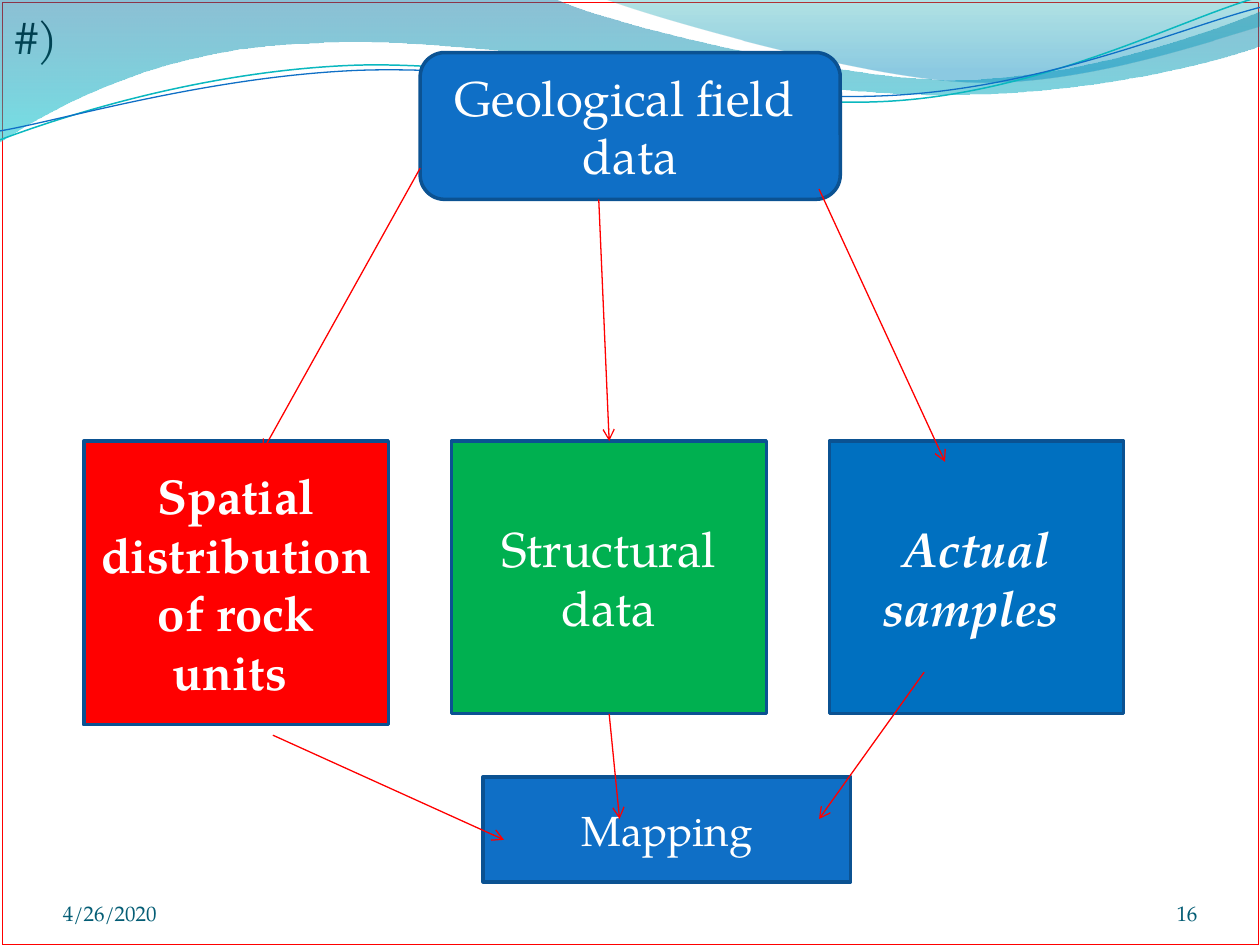
from lxml import etree
from pptx import Presentation, util as u
from pptx.dml.color import RGBColor
from pptx.enum import shapes, text
from pptx.oxml import ns

FONT = "TeX Gyre Pagella"
WHITE = RGBColor(0xFF, 0xFF, 0xFF)
BLACK = RGBColor(0x00, 0x00, 0x00)
RED = RGBColor(0xFF, 0x00, 0x00)
GREEN = RGBColor(0x00, 0xB0, 0x50)
BLUE = RGBColor(0x0F, 0x6F, 0xC6)
SAMPLE_BLUE = RGBColor(0x00, 0x70, 0xC0)
BORDER = RGBColor(0x0B, 0x52, 0x92)
FOOTER = RGBColor(0x04, 0x5D, 0x75)
TURQUOISE = RGBColor(0x0A, 0xB8, 0xBF)
DEEP_TEAL = RGBColor(0x00, 0x74, 0xA1)
AQUA = RGBColor(0x00, 0xC6, 0xCF)
TEAL = RGBColor(0x00, 0xA1, 0xA9)
SKY = RGBColor(0x00, 0x8B, 0xBF)


def draw_wave(start, segments, closed):
    """Draw a wave in cm; a segment is a line end or a six-number Bezier curve."""
    points = [(u.Cm(x), u.Cm(y)) for segment in segments
              for x, y in zip(segment[::2], segment[1::2])]
    builder = slide.shapes.build_freeform(u.Cm(start[0]), u.Cm(start[1]))
    builder.add_line_segments(points, close=closed)
    wave = builder.convert_to_shape()
    wave.shadow.inherit = False
    steps = iter(list(wave._element.spPr.iter(ns.qn("a:lnTo"))))
    for segment in segments:
        step = next(steps)
        if len(segment) == 6:
            curve = etree.Element(ns.qn("a:cubicBezTo"))
            step.addprevious(curve)
            for control in (step, next(steps), next(steps)):
                curve.append(control[0])
                control.getparent().remove(control)
    return wave


def write(shape, words, size, color, align, bold=False, italic=False):
    shape.text_frame.word_wrap = True
    paragraph = shape.text_frame.paragraphs[0]
    paragraph.alignment = align
    run = paragraph.add_run()
    run.text = words
    run.font.name = FONT
    run.font.size = u.Pt(size)
    run.font.color.rgb = color
    run.font.bold = bold
    run.font.italic = italic


prs = Presentation()
prs.slide_width, prs.slide_height = u.Cm(25.4), u.Cm(19.05)
slide = prs.slides.add_slide(prs.slide_layouts[1])
title = slide.shapes.title._element
title.getparent().remove(title)

# Wave bands: start, segments, gradient stops (position, colour, opacity %)
bands = [
    ((0, 0),
     [(11.18, -0.03), (12.09, 0.43, 16.87, 1.6, 19.25, 1.6),
      (21.67, 1.6, 24.33, 0.66, 25.4, 0.23), (25.43, 0.91),
      (24.97, 1.12, 22.1, 1.93, 18.95, 1.91),
      (15.8, 1.91, 9.7, 0.71, 6.53, 0.86),
      (3.28, 0.91, 1.17, 2.11, -0.03, 2.87)],
     [(0, DEEP_TEAL, 45), (1, AQUA, 55)]),
    ((12.17, -0.03),
     [(12.93, 0.28, 17.32, 1.57, 19.53, 1.65),
      (21.74, 1.75, 24.41, 0.81, 25.4, 0.53), (25.4, 0)],
     [(0, TEAL, 30), (0.8, SKY, 45)]),
]
for start, segments, stops in bands:
    band = draw_wave(start, segments, closed=True)
    band.line.fill.background()
    band.fill.gradient()
    band.fill.gradient_angle = 270
    for stop, (position, color, opacity) in zip(band.fill.gradient_stops, stops):
        stop.position = position
        stop.color.rgb = color
    for rgb, (_, _, opacity) in zip(band._element.spPr.iter(ns.qn("a:srgbClr")), stops):
        etree.SubElement(rgb, ns.qn("a:alpha"), val=str(opacity * 1000))

wave_lines = [
    ((0, 2.82),
     [(1.22, 2.36, 4.01, 1.45, 7.04, 1.32),
      (10.03, 1.19, 15.06, 2.26, 18.11, 2.03),
      (21.16, 1.8, 23.83, 0.38, 25.35, -0.05)], TURQUOISE, 0.85),
    ((0, 2.64),
     [(1.19, 2.44, 4.17, 1.55, 7.19, 1.42),
      (10.24, 1.3, 15.16, 2.13, 18.21, 1.91),
      (21.23, 1.7, 23.9, 0.53, 25.4, 0.15)], BLUE, 0.75),
]
for start, segments, color, width in wave_lines:
    wave_line = draw_wave(start, segments, closed=False)
    wave_line.fill.background()
    wave_line.line.color.rgb = color
    wave_line.line.width = u.Pt(width)

# Red frame with the slide's marker
frame = slide.placeholders[1]
frame.left, frame.top = u.Cm(0.05), u.Cm(0.05)
frame.width, frame.height = u.Cm(25.32), u.Cm(19)
frame.line.color.rgb = RED
frame.line.width = u.Pt(0.75)
write(frame, "#)", 26, BLACK, text.PP_ALIGN.LEFT)
marker_format = frame.text_frame.paragraphs[0]._p.get_or_add_pPr()
marker_format.set("marL", str(u.Cm(0.76)))
marker_format.set("indent", str(u.Cm(-0.76)))
etree.SubElement(marker_format, ns.qn("a:buNone"))

RECT, ROUNDED = shapes.MSO_SHAPE.RECTANGLE, shapes.MSO_SHAPE.ROUNDED_RECTANGLE
boxes = [
    ("Geological field  data", ROUNDED, 8.47, 1.06, 8.47, 2.96, BLUE, 28, False, False),
    ("Spatial distribution of rock units ", RECT, 1.69, 8.89, 6.14, 5.72, RED, 28, True, False),
    ("Structural data", RECT, 9.1, 8.89, 6.35, 5.5, GREEN, 28, False, False),
    ("Actual samples ", RECT, 16.72, 8.89, 5.93, 5.5, SAMPLE_BLUE, 28, True, True),
    ("Mapping", RECT, 9.74, 15.66, 7.41, 2.12, BLUE, 24, False, False),
]
for words, kind, left, top, width, height, fill, size, bold, italic in boxes:
    box = slide.shapes.add_shape(kind, u.Cm(left), u.Cm(top), u.Cm(width), u.Cm(height))
    box.shadow.inherit = False
    box.fill.solid()
    box.fill.fore_color.rgb = fill
    box.line.color.rgb = BORDER
    box.line.width = u.Pt(2)
    box.text_frame.vertical_anchor = text.MSO_ANCHOR.MIDDLE
    write(box, words, size, WHITE, text.PP_ALIGN.CENTER, bold, italic)

arrows = [
    (8.47, 3.39, 5.29, 9.1),
    (12.07, 4.02, 12.28, 8.89),
    (16.51, 3.81, 19.05, 9.31),
    (5.5, 14.82, 10.16, 16.93),
    (12.28, 14.39, 12.49, 16.51),
    (18.63, 13.55, 16.51, 16.51),
]
for ends in arrows:
    arrow = slide.shapes.add_connector(
        shapes.MSO_CONNECTOR.STRAIGHT, *[u.Cm(end) for end in ends])
    arrow.line.color.rgb = RED
    arrow.line.width = u.Pt(0.75)
    etree.SubElement(arrow.line._get_or_add_ln(), ns.qn("a:tailEnd"), type="arrow")
    etree.SubElement(arrow._element.spPr, ns.qn("a:effectLst"))

footers = [
    ("16", 22.02, 2.12, text.PP_ALIGN.RIGHT),
    ("4/26/2020", 1.27, 5.93, text.PP_ALIGN.LEFT),
]
for words, left, width, align in footers:
    footer = slide.shapes.add_textbox(u.Cm(left), u.Cm(17.65), u.Cm(width), u.Cm(1.02))
    body = footer.text_frame
    body.margin_left = body.margin_right = body.margin_top = body.margin_bottom = 0
    body.vertical_anchor = text.MSO_ANCHOR.BOTTOM
    write(footer, words, 12, FOOTER, align)

prs.save("out.pptx")
